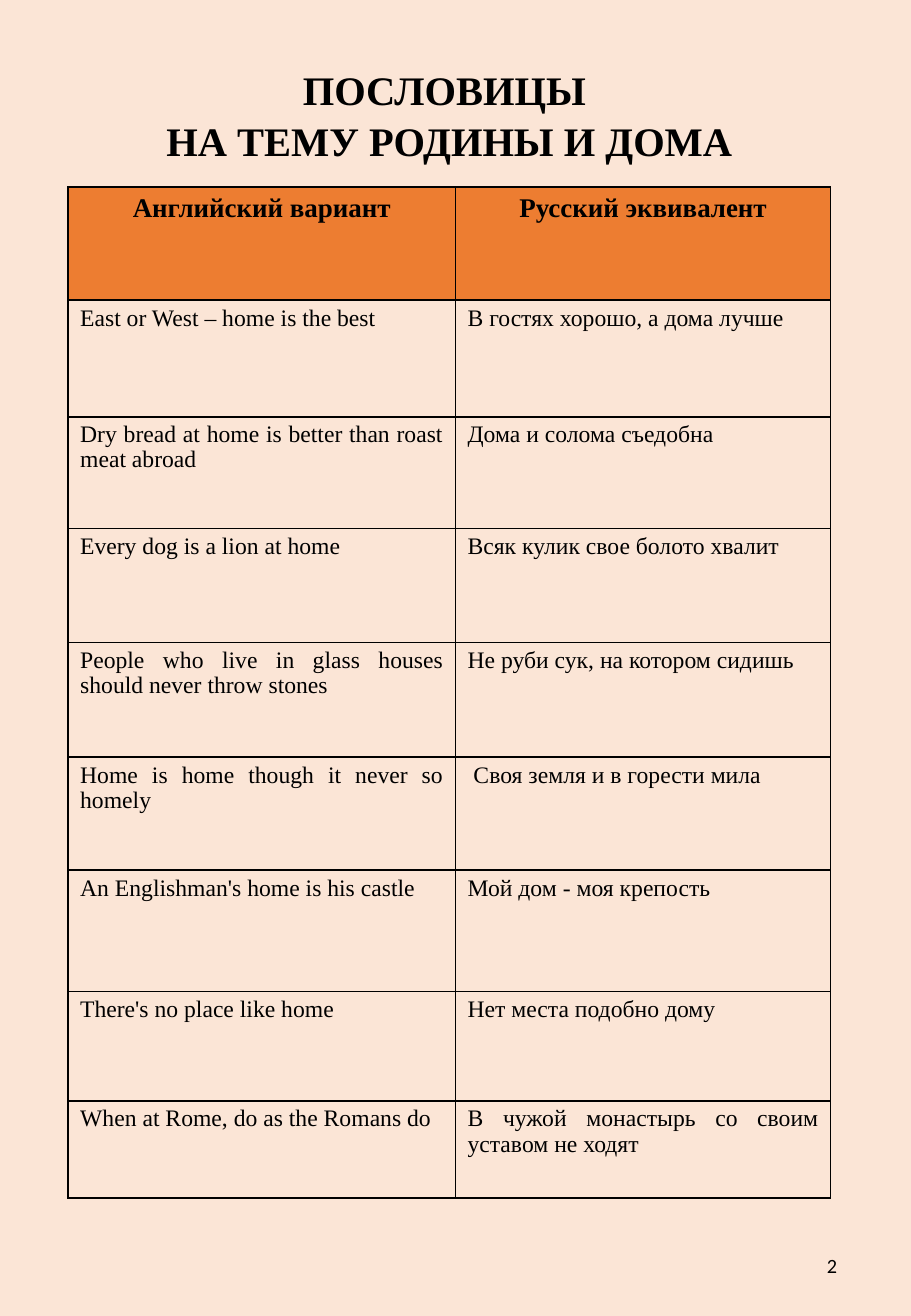
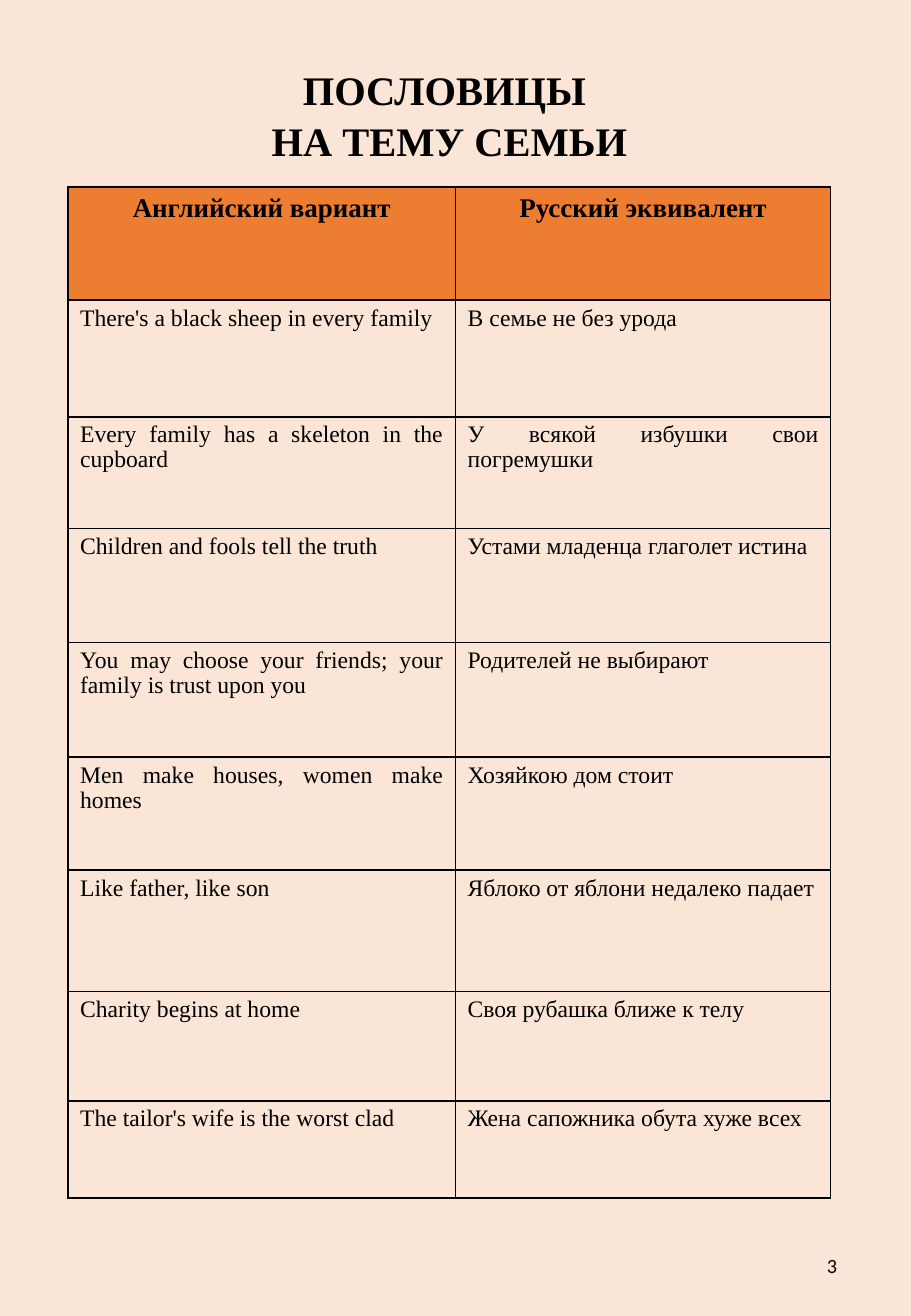
from lxml.etree import SubElement
from pptx import Presentation
from pptx.dml.color import RGBColor
from pptx.enum.text import MSO_ANCHOR, PP_ALIGN
from pptx.oxml.ns import qn
from pptx.util import Inches, Pt

COLORS = {"page": "FBE5D6", "header": "ED7D31", "ink": "000000"}
SERIF, SANS = "Times New Roman", "Calibri"
LEFT, WIDTH = 0.56, 6.28
TITLE_BOX = (LEFT, 0.46, WIDTH, 0.91)
TABLE_BOX = (LEFT, 1.54, WIDTH, 8.32)
NUMBER_BOX = (6.67, 10.2, 0.32, 0.42)
COL_WIDTHS = (3.19, 3.09)
ROW_HEIGHTS = (0.93, 0.96, 0.92, 0.94, 0.94, 0.93, 1, 0.9, 0.8)
HEADER = ("Английский вариант", "Русский эквивалент")

PAGES = [
    ("НА ТЕМУ РОДИНЫ И ДОМА", "2", [
        ("East or West – home is the best", "В гостях хорошо, а дома лучше"),
        ("Dry bread at home is better than roast meat abroad", "Дома и солома съедобна"),
        ("Every dog is a lion at home", "Всяк кулик свое болото хвалит"),
        ("People who live in glass houses should never throw stones",
         "Не руби сук, на котором сидишь"),
        ("Home is home though it never so homely", " Своя земля и в горести мила"),
        ("An Englishman's home is his castle", "Мой дом - моя крепость"),
        ("There's no place like home", "Нет места подобно дому"),
        ("When at Rome, do as the Romans do", "В чужой монастырь со своим уставом не ходят"),
    ]),
    ("НА ТЕМУ СЕМЬИ", "3", [
        ("There's a black sheep in every family", "В семье не без урода"),
        ("Every family has a skeleton in the cupboard", "У всякой избушки свои погремушки"),
        ("Children and fools tell the truth", "Устами младенца глаголет истина"),
        ("You may choose your friends; your family is trust upon you", "Родителей не выбирают"),
        ("Men make houses, women make homes", "Хозяйкою дом стоит"),
        ("Like father, like son", "Яблоко от яблони недалеко падает"),
        ("Charity begins at home", "Своя рубашка ближе к телу"),
        ("The tailor's wife is the worst clad", "Жена сапожника обута хуже всех"),
    ]),
]


def rgb(name):
    """Return the named colour."""
    return RGBColor.from_string(COLORS[name])


def write(tf, text, size, align, font=SERIF, bold=False, spacing=1.0):
    """Fill a text frame and format each of its paragraphs."""
    tf.text = text
    tf.word_wrap = True
    for p in tf.paragraphs:
        p.alignment = align
        p.line_spacing = spacing
        for r in p.runs:
            r.font.name, r.font.size, r.font.bold = font, Pt(size), bold
            r.font.color.rgb = rgb("ink")


def add_text(s, box, text, size, align, **style):
    """Add a text box and return its frame."""
    tf = s.shapes.add_textbox(*map(Inches, box)).text_frame
    write(tf, text, size, align, **style)
    return tf


def add_borders(cell):
    """Draw a one-point line on all four sides of a cell."""
    tc_pr = cell._tc.get_or_add_tcPr()
    for side in ("lnL", "lnR", "lnT", "lnB"):
        ln = SubElement(tc_pr, qn(f"a:{side}"), w=str(Pt(1)))
        fill = SubElement(ln, qn("a:solidFill"))
        SubElement(fill, qn("a:srgbClr"), val=COLORS["ink"])


def add_proverb_table(s, box, proverbs):
    """Add the two-column table of proverbs under its header row."""
    rows = [HEADER, *proverbs]
    table = s.shapes.add_table(len(rows), len(HEADER), *map(Inches, box)).table
    for col, width in zip(table.columns, COL_WIDTHS):
        col.width = Inches(width)
    for i, (row, height, texts) in enumerate(zip(table.rows, ROW_HEIGHTS, rows)):
        row.height = Inches(height)
        for cell, text in zip(row.cells, texts):
            add_borders(cell)
            if i == 0:
                cell.fill.solid()
                cell.fill.fore_color.rgb = rgb("header")
                write(cell.text_frame, text, 16, PP_ALIGN.CENTER, bold=True)
            else:
                cell.fill.background()
                write(cell.text_frame, text, 14, PP_ALIGN.JUSTIFY, spacing=0.96)


def add_page(prs, topic, number, proverbs):
    """Add one page with its title, table and page number."""
    s = prs.slides.add_slide(prs.slide_layouts[6])
    s.background.fill.solid()
    s.background.fill.fore_color.rgb = rgb("page")
    add_proverb_table(s, TABLE_BOX, proverbs)
    add_text(s, TITLE_BOX, f"ПОСЛОВИЦЫ \n{topic}", 24, PP_ALIGN.CENTER, bold=True, spacing=1.06)
    tf = add_text(s, NUMBER_BOX, number, 12, PP_ALIGN.RIGHT, font=SANS)
    tf.vertical_anchor = MSO_ANCHOR.MIDDLE


def main():
    """Build and save the presentation."""
    prs = Presentation()
    prs.slide_width, prs.slide_height = Inches(7.5), Inches(10.83)
    for page in PAGES:
        add_page(prs, *page)
    prs.save("out.pptx")


if __name__ == "__main__":
    main()
